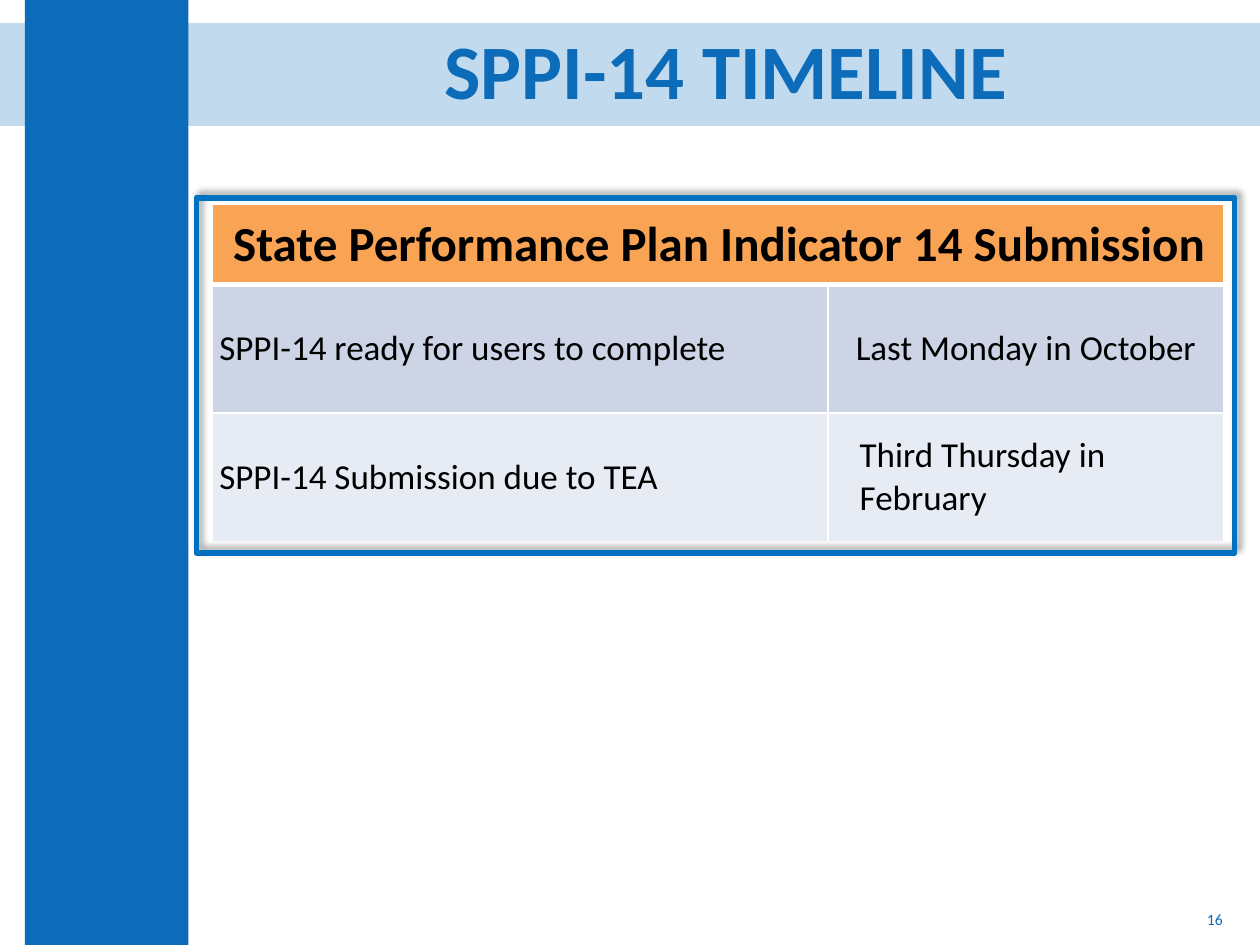
from lxml import etree
from pptx import Presentation
from pptx.dml.color import RGBColor
from pptx.enum.shapes import MSO_SHAPE
from pptx.enum.text import MSO_ANCHOR, PP_ALIGN
from pptx.oxml import parse_xml
from pptx.oxml.ns import nsdecls, qn
from pptx.util import Cm, Pt

RECTANGLE = MSO_SHAPE.RECTANGLE
MIDDLE = MSO_ANCHOR.MIDDLE
LEFT, CENTER, RIGHT = PP_ALIGN.LEFT, PP_ALIGN.CENTER, PP_ALIGN.RIGHT

# Content
TITLE = "SPPI-14 TIMELINE"
PAGE_NUMBER = "16"
TABLE_HEADING = "State Performance Plan Indicator 14 Submission"
MILESTONES = [
    ("SPPI-14 ready for users to complete", "Last Monday in October"),
    ("SPPI-14 Submission due to TEA", "Third Thursday in February"),
]
DATE_FORMATS = [
    {"align": CENTER, "indent": 0},
    {"align": LEFT, "indent": 0.64},
]

# Look
THEME = {
    "font": "Calibri",
    "blue": "0D6CB9", "frame": "0070C0", "heading": "F9A354",
    "rows": ["CCD4E6", "E7EBF3"], "text": "000000", "rule": "FFFFFF",
    "title_size": 44, "heading_size": 28, "body_size": 20, "number_size": 9,
}

# Places in centimetres: left, top, width, height
PAGE = (25.4, 19.05)
BAND = (0, 0.46, PAGE[0], 2.08)
BAR = (0.5, 0, 3.3, PAGE[1])
TITLE_BOX = (4.6, 0.46, 20.07, 2.08)
NUMBER_BOX = (19.18, 18.03, 5.72, 1.02)
FRAME = (3.96, 3.99, 20.93, 7.16)
TABLE_ORIGIN = (4.27, 4.11)
COLUMNS = (12.42, 7.98)
ROWS = (1.63, 2.59, 2.59)


def color(name):
    return RGBColor.from_string(name)


def lengths(place):
    return [Cm(value) for value in place]


def write(para, text, size, fill, align=LEFT, bold=False):
    para.alignment = align
    span = para.add_run()
    span.text = text
    formats = {"name": THEME["font"], "size": Pt(size), "bold": bold}
    for name, value in formats.items():
        setattr(span.font, name, value)
    span.font.color.rgb = color(fill)
    return span


def add_block(page, place, fill):
    block = page.shapes.add_shape(RECTANGLE, *lengths(place))
    block.shadow.inherit = False
    block.line.fill.background()
    block.fill.solid()
    block.fill.fore_color.rgb = color(fill)
    return block


def add_border(cell, side, width):
    properties = cell._tc.get_or_add_tcPr()
    border = parse_xml(
        f'<a:{side} {nsdecls("a")} w="{Pt(width)}"><a:solidFill>'
        f'<a:srgbClr val="{THEME["rule"]}"/></a:solidFill></a:{side}>')
    properties.append(border)


def fill_cell(cell, text, size, fill, align=LEFT, indent=0, bold=False, bottom=1):
    margins = {"margin_left": Cm(indent), "margin_right": 0,
               "margin_top": 0, "margin_bottom": 0}
    for name, value in margins.items():
        setattr(cell, name, value)
    cell.vertical_anchor = MIDDLE
    write(cell.text_frame.paragraphs[0], text, size, THEME["text"], align, bold)
    # Borders come before the fill in the cell properties
    for side, width in (("lnL", 1), ("lnR", 1), ("lnT", 1), ("lnB", bottom)):
        add_border(cell, side, width)
    cell.fill.solid()
    cell.fill.fore_color.rgb = color(fill)


def add_backdrop(page):
    band = add_block(page, BAND, THEME["blue"])
    band_color = band._element.spPr.find(qn("a:solidFill"))[0]
    etree.SubElement(band_color, qn("a:alpha"), val="25000")
    add_block(page, BAR, THEME["blue"])


def add_title(page):
    title = page.shapes.title
    for name, value in zip(("left", "top", "width", "height"), lengths(TITLE_BOX)):
        setattr(title, name, value)
    title.text_frame.vertical_anchor = MIDDLE
    para = title.text_frame.paragraphs[0]
    para.line_spacing = 0.9
    write(para, TITLE, THEME["title_size"], THEME["blue"], CENTER, True)
    # Bring the title in front of the band
    page.shapes._spTree.append(title._element)


def add_page_number(page):
    box = page.shapes.add_textbox(*lengths(NUMBER_BOX))
    box.text_frame.word_wrap = True
    box.text_frame.vertical_anchor = MIDDLE
    write(box.text_frame.paragraphs[0], PAGE_NUMBER,
          THEME["number_size"], THEME["blue"], RIGHT)


def add_timeline(page):
    place = (*TABLE_ORIGIN, sum(COLUMNS), sum(ROWS))
    table = page.shapes.add_table(len(ROWS), len(COLUMNS), *lengths(place)).table
    for column, width in zip(table.columns, COLUMNS):
        column.width = Cm(width)
    for row, height in zip(table.rows, ROWS):
        row.height = Cm(height)

    heading = table.cell(0, 0)
    heading.merge(table.cell(0, 1))
    fill_cell(heading, TABLE_HEADING, THEME["heading_size"], THEME["heading"],
              indent=0.43, bold=True, bottom=3)
    rows = zip(MILESTONES, DATE_FORMATS, THEME["rows"])
    for index, ((step, date), date_format, fill) in enumerate(rows, 1):
        fill_cell(table.cell(index, 0), step, THEME["body_size"], fill, indent=0.15)
        fill_cell(table.cell(index, 1), date, THEME["body_size"], fill, **date_format)


def add_frame(page):
    frame = page.shapes.add_shape(RECTANGLE, *lengths(FRAME))
    frame.fill.background()
    frame.line.color.rgb = color(THEME["frame"])
    frame.line.width = Pt(3)
    # Soft shadow up and to the right
    frame._element.spPr.append(parse_xml(
        f'<a:effectLst {nsdecls("a")}><a:outerShdw blurRad="{Pt(4)}" '
        f'dist="{Pt(3)}" dir="{315 * 60000}" algn="bl" rotWithShape="0">'
        '<a:srgbClr val="000000"><a:alpha val="40000"/></a:srgbClr>'
        '</a:outerShdw></a:effectLst>'))


def main():
    deck = Presentation()
    deck.slide_width, deck.slide_height = lengths(PAGE)
    page = deck.slides.add_slide(deck.slide_layouts[5])
    add_backdrop(page)
    add_page_number(page)
    add_title(page)
    add_timeline(page)
    add_frame(page)
    deck.save("out.pptx")


if __name__ == "__main__":
    main()
